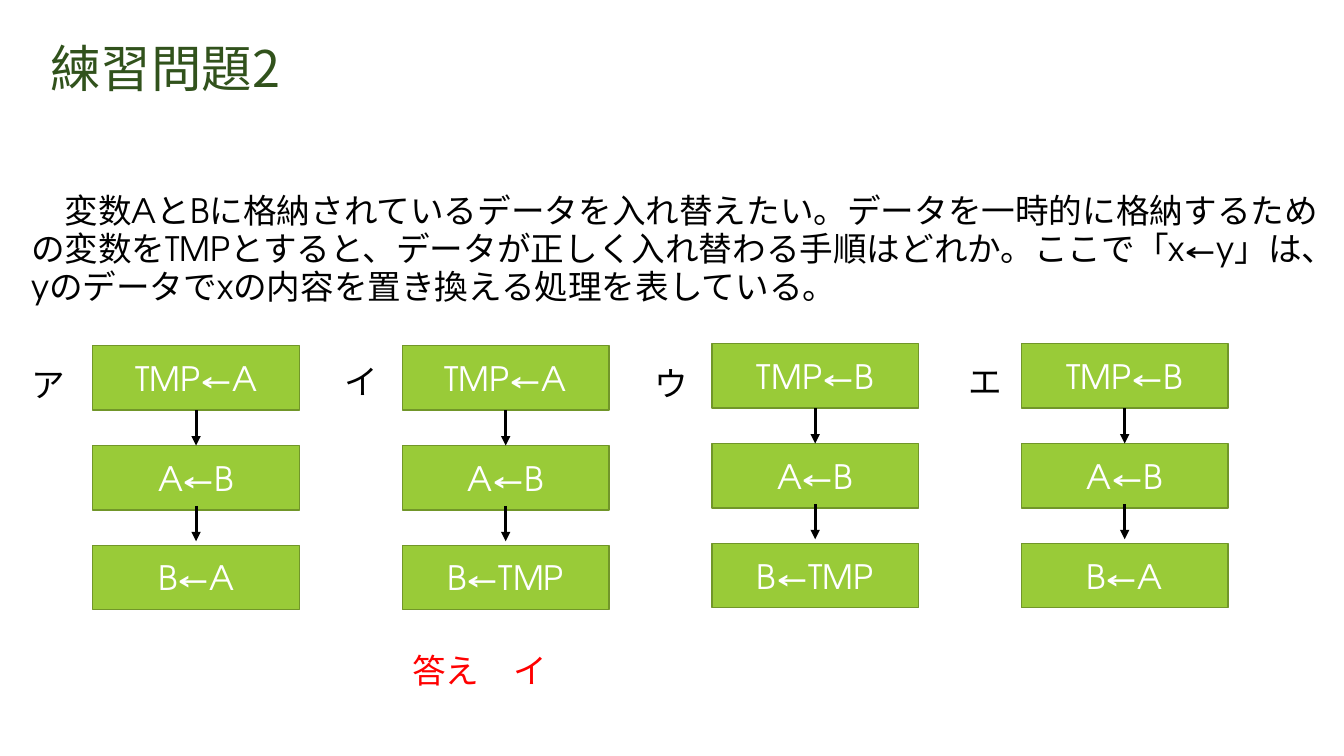
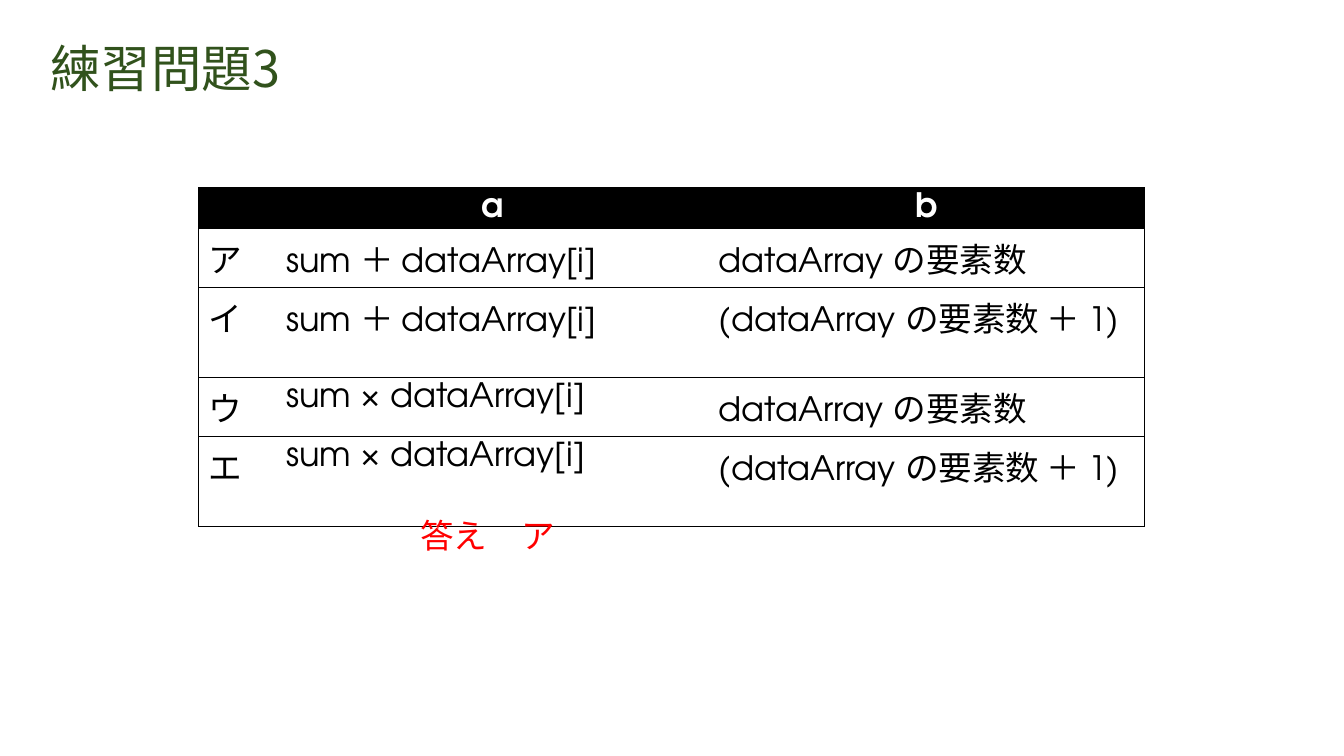
from copy import deepcopy

from lxml.etree import SubElement
from pptx import Presentation
from pptx.dml.color import RGBColor
from pptx.enum.shapes import MSO_CONNECTOR, MSO_SHAPE
from pptx.enum.text import MSO_ANCHOR, MSO_AUTO_SIZE, PP_ALIGN
from pptx.oxml.ns import qn
from pptx.util import Inches, Pt

COLORS = {
    "title": "31521C",
    "text": "000000",
    "answer": "FF0000",
    "step": "99CB38",
    "step_line": "719629",
    "white": "FFFFFF",
}
LATIN_FONT = "TeX Gyre Adventor"
JAPANESE_FONT = "Noto Sans CJK JP"
NO_STYLE_TABLE = "{2D5ABB26-0587-4C30-8999-92F81FD0307C}"

QUESTION = (
    "　変数AとBに格納されているデータを入れ替えたい。"
    "データを一時的に格納するための変数をTMPとすると、"
    "データが正しく入れ替わる手順はどれか。"
    "ここで「x←y」は、yのデータでxの内容を置き換える処理を表している。"
)
CHOICES = [
    ("ア", 0.21, 3.59, 3.43, ["TMP←A", "A←B", "B←A"]),
    ("イ", 3.32, 3.56, 3.43, ["TMP←A", "A←B", "B←TMP"]),
    ("ウ", 6.39, 3.58, 3.41, ["TMP←B", "A←B", "B←TMP"]),
    ("エ", 9.51, 3.56, 3.41, ["TMP←B", "A←B", "B←A"]),
]
TABLE_ROWS = [
    ("", "a", "b"),
    ("ア", "sum ＋ dataArray[i]", "dataArray の要素数"),
    ("イ", "sum ＋ dataArray[i]", "(dataArray の要素数 ＋ 1)"),
    ("ウ", "sum × dataArray[i]", "dataArray の要素数"),
    ("エ", "sum × dataArray[i]", "(dataArray の要素数 ＋ 1)"),
]


def rgb(name):
    return RGBColor.from_string(COLORS[name])


def add_run(paragraph, text, color, size=24, font=LATIN_FONT, bold=False):
    run = paragraph.add_run()
    run.text = text
    run.font.size = Pt(size)
    run.font.name = font
    run.font.bold = bold
    run.font.color.rgb = rgb(color)
    SubElement(run._r.rPr, qn("a:ea"), typeface=JAPANESE_FONT)
    return run


def add_title_slide(presentation, title):
    slide = presentation.slides.add_slide(presentation.slide_layouts[5])
    shape = slide.shapes.title
    shape.left, shape.top = Inches(0.37), Inches(0.44)
    shape.width, shape.height = Inches(12.6), Inches(1.2)
    frame = shape.text_frame
    frame.word_wrap = True
    frame.auto_size = MSO_AUTO_SIZE.NONE
    frame.vertical_anchor = MSO_ANCHOR.BOTTOM
    frame.margin_left = frame.margin_right = Inches(0.13)
    frame.margin_top = frame.margin_bottom = Inches(0.07)
    paragraph = frame.paragraphs[0]
    paragraph.alignment = PP_ALIGN.LEFT
    paragraph.line_spacing = 0.85
    run = add_run(paragraph, title, "title", 36, JAPANESE_FONT)
    paragraph.add_line_break()
    paragraph._p[-1].append(deepcopy(run._r.rPr))
    return slide


def add_text(slide, left, top, width, height, text, color="text"):
    shape = slide.shapes.add_textbox(
        Inches(left), Inches(top), Inches(width), Inches(height)
    )
    frame = shape.text_frame
    frame.word_wrap = True
    frame.auto_size = MSO_AUTO_SIZE.SHAPE_TO_FIT_TEXT
    paragraph = frame.paragraphs[0]
    paragraph.line_spacing = 0.95
    add_run(paragraph, text, color)


def add_step(shapes, left, top, width, height, text):
    shape = shapes.add_shape(
        MSO_SHAPE.RECTANGLE, Inches(left), Inches(top), Inches(width), Inches(height)
    )
    shape.shadow.inherit = False
    shape.fill.solid()
    shape.fill.fore_color.rgb = rgb("step")
    shape.line.color.rgb = rgb("step_line")
    shape.line.width = Pt(1)
    frame = shape.text_frame
    frame.vertical_anchor = MSO_ANCHOR.MIDDLE
    paragraph = frame.paragraphs[0]
    paragraph.alignment = PP_ALIGN.CENTER
    add_run(paragraph, text, "white")


def add_down_arrow(shapes, center, top, length):
    connector = shapes.add_connector(
        MSO_CONNECTOR.STRAIGHT,
        Inches(center), Inches(top), Inches(center), Inches(top + length),
    )
    connector.line.color.rgb = rgb("text")
    connector.line.width = Pt(2.25)
    SubElement(connector.line._get_or_add_ln(), qn("a:tailEnd"), type="triangle")
    SubElement(connector._element.spPr, qn("a:effectLst"))


def add_flow(slide, left, top, steps):
    width, height, pitch = 2.05, 0.64, 0.99
    shapes = slide.shapes.add_group_shape().shapes
    for index, text in enumerate(steps):
        add_step(shapes, left, top + index * pitch, width, height, text)
    for index in range(len(steps) - 1):
        add_down_arrow(shapes, left + width / 2, top + height + index * 0.95, 0.35)


def set_borders(cell, sides):
    properties = cell._tc.get_or_add_tcPr()
    for position, side in enumerate(sides):
        line = properties.makeelement(qn(f"a:ln{side}"), {"w": str(Pt(0.5))})
        fill = SubElement(line, qn("a:solidFill"))
        SubElement(fill, qn("a:srgbClr"), val=COLORS["text"])
        properties.insert(position, line)


def add_choice_table(slide, left, top, widths, row_height, rows):
    frame = slide.shapes.add_table(
        len(rows), len(widths), Inches(left), Inches(top),
        Inches(sum(widths)), Inches(row_height * len(rows)),
    )
    table = frame.table
    table.horz_banding = False
    table._tbl.tblPr.find(qn("a:tableStyleId")).text = NO_STYLE_TABLE
    for column, width in zip(table.columns, widths):
        column.width = Inches(width)
    last = len(widths) - 1
    for row_index, row in enumerate(rows):
        header = row_index == 0
        for column_index, text in enumerate(row):
            cell = table.cell(row_index, column_index)
            if header:
                cell.fill.solid()
                cell.fill.fore_color.rgb = rgb("text")
            else:
                cell.fill.background()
            sides = ["L"] * (column_index == 0) + ["R"] * (column_index == last)
            set_borders(cell, sides + ["T", "B"])
            if text:
                paragraph = cell.text_frame.paragraphs[0]
                paragraph.alignment = PP_ALIGN.CENTER if header else PP_ALIGN.LEFT
                add_run(paragraph, text, "white" if header else "text", bold=header)


def build_flow_slide(presentation):
    slide = add_title_slide(presentation, "練習問題2")
    add_text(slide, 0.21, 1.86, 12.99, 1.25, QUESTION)
    add_text(slide, 3.99, 6.43, 2.05, 0.87, "答え　イ", "answer")
    for index, (label, label_left, label_top, top, steps) in enumerate(CHOICES):
        add_flow(slide, 0.92 + index * 3.07, top, steps)
        add_text(slide, label_left, label_top, 0.63, 0.48, label)


def build_table_slide(presentation):
    slide = add_title_slide(presentation, "練習問題3")
    add_choice_table(slide, 1.97, 1.86, [0.77, 4.29, 4.32], 0.41, TABLE_ROWS)
    add_text(slide, 4.07, 5.09, 5.43, 0.48, "答え　ア", "answer")


def main():
    presentation = Presentation()
    presentation.slide_width = Inches(13.33)
    presentation.slide_height = Inches(7.5)
    build_flow_slide(presentation)
    build_table_slide(presentation)
    presentation.save("out.pptx")


if __name__ == "__main__":
    main()
